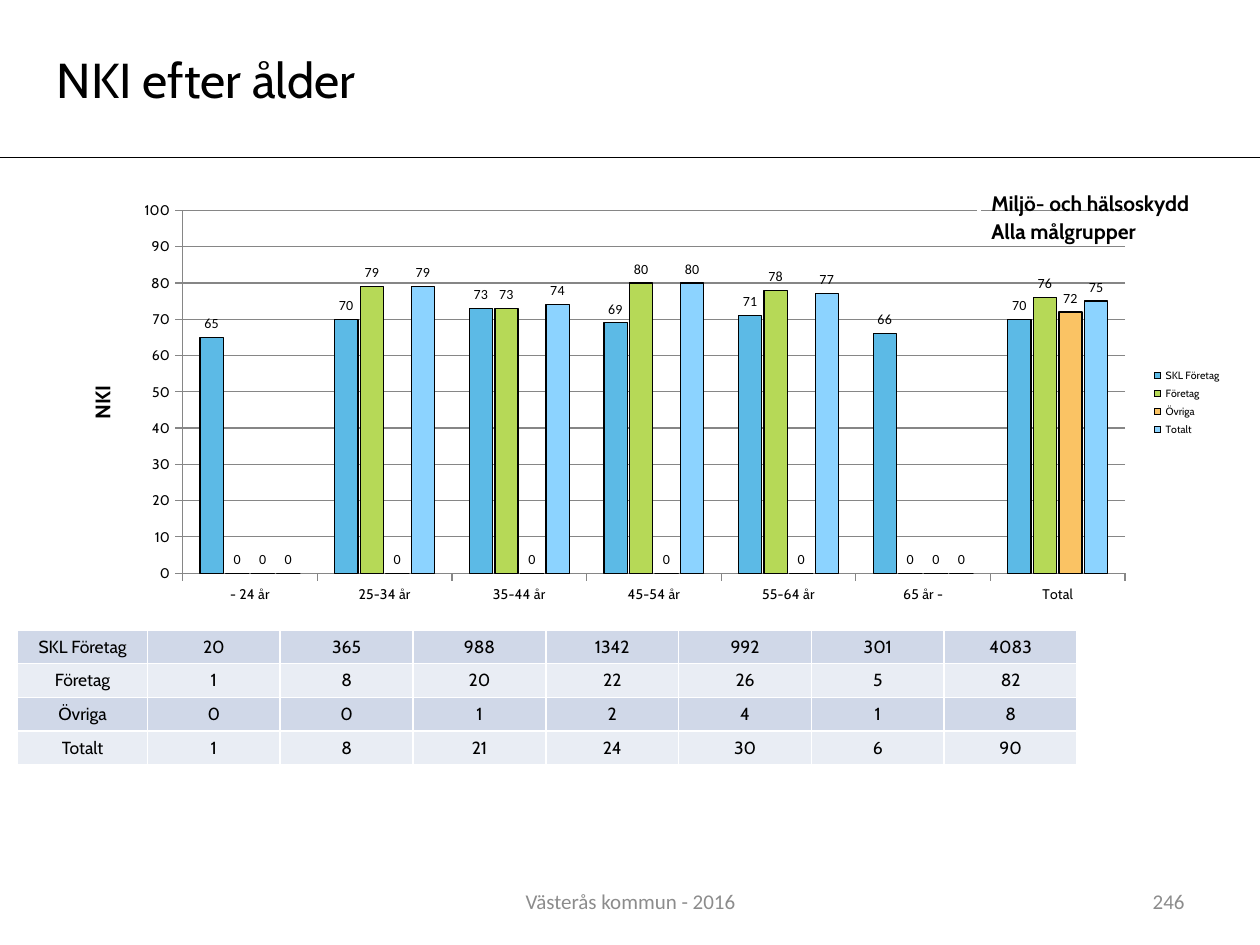
from typing import NamedTuple

from lxml.etree import SubElement
from pptx import Presentation
from pptx.chart.data import CategoryChartData
from pptx.dml.color import RGBColor
from pptx.enum.chart import XL_CHART_TYPE, XL_LABEL_POSITION, XL_LEGEND_POSITION, XL_TICK_MARK
from pptx.enum.shapes import MSO_CONNECTOR, MSO_SHAPE
from pptx.enum.text import MSO_ANCHOR, MSO_AUTO_SIZE, PP_ALIGN
from pptx.oxml import parse_xml
from pptx.oxml.ns import nsdecls, qn
from pptx.util import Inches, Pt

COLORS = {
    "black": "000000", "white": "FFFFFF", "footer": "8C8C8C", "grid": "868686",
    "band": "D0D8E8", "light": "E9EDF4",
}
AGES = ["- 24 år", "25-34 år", "35-44 år", "45-54 år", "55-64 år", "65 år -", "Total"]
CHART_BOX = (0.49, 1.53, 9.31, 3.33)
TABLE_BOX = (0.14, 5, 8.41, 1.07)
NAME_WIDTH = 1.03


class Group(NamedTuple):
    name: str
    color: str
    scores: list[int | None]
    counts: list[int]


class Label(NamedTuple):
    text: str
    box: tuple[float, float, float, float]


GROUPS = [
    Group("SKL Företag", "5CBAE6", [65, 70, 73, 69, 71, 66, 70], [20, 365, 988, 1342, 992, 301, 4083]),
    Group("Företag", "B6D957", [None, 79, 73, 80, 78, None, 76], [1, 8, 20, 22, 26, 5, 82]),
    Group("Övriga", "FAC364", [None] * 6 + [72], [0, 0, 1, 2, 4, 1, 8]),
    Group("Totalt", "8CD3FF", [None, 79, 74, 80, 77, None, 75], [1, 8, 21, 24, 30, 6, 90]),
]
SUBTITLES = [
    Label("Miljö- och hälsoskydd", (7.77, 1.53, 2.16, 0.17)),
    Label("Alla målgrupper", (7.77, 1.75, 2.16, 0.17)),
]


def rgb(name: str) -> RGBColor:
    return RGBColor.from_string(COLORS.get(name, name))


def format_font(font, size: float, color: str = "black", name: str = "Cabin", bold: bool = False) -> None:
    font.size = Pt(size)
    font.name = name
    font.bold = bold
    font.color.rgb = rgb(color)


def write(tf, text: str, align=PP_ALIGN.LEFT, **font) -> None:
    tf.word_wrap = True
    tf.vertical_anchor = MSO_ANCHOR.MIDDLE
    p = tf.paragraphs[0]
    p.alignment = align
    r = p.add_run()
    r.text = text
    format_font(r.font, **font)


def outline(line, color: str, width: float) -> None:
    line.color.rgb = rgb(color)
    line.width = Pt(width)


def add_title(s, text: str) -> None:
    sp = s.shapes.title
    sp.left, sp.top, sp.width, sp.height = map(Inches, (0.07, 0.43, 6, 0.39))
    outline(sp.line, "white", 2)
    tf = sp.text_frame
    tf.auto_size = MSO_AUTO_SIZE.NONE
    tf.margin_left = Inches(0.38)
    write(tf, text, size=28)


def add_subtitle(s, label: Label) -> None:
    sp = s.shapes.add_shape(MSO_SHAPE.RECTANGLE, *map(Inches, label.box))
    sp.shadow.inherit = False
    sp.fill.background()
    outline(sp.line, "white", 2)
    write(sp.text_frame, label.text, size=12, bold=True)


def add_footer(s, label: Label, align) -> None:
    sp = s.shapes.add_textbox(*map(Inches, label.box))
    write(sp.text_frame, label.text, align, size=12, color="footer", name="Calibri")


def add_rule(s, y: float) -> None:
    cx = s.shapes.add_connector(MSO_CONNECTOR.STRAIGHT, 0, Inches(y), Inches(10), Inches(y))
    outline(cx.line, "black", 0.75)
    SubElement(cx._element.spPr, qn("a:effectLst"))


def set_layout(parent, index: int, inner: bool = False, **inches: float) -> None:
    for old in parent.findall(qn("c:layout")):
        parent.remove(old)
    width, height = CHART_BOX[2:]
    target = '<c:layoutTarget val="inner"/>' if inner else ""
    modes = '<c:xMode val="edge"/><c:yMode val="edge"/>'
    values = "".join(f'<c:{key} val="{value / (width if key in "xw" else height)}"/>'
                     for key, value in inches.items())
    parent.insert(index, parse_xml(
        f'<c:layout {nsdecls("c")}><c:manualLayout>{target}{modes}{values}</c:manualLayout></c:layout>'))


def add_score_chart(s) -> None:
    data = CategoryChartData()
    data.categories = AGES
    for group in GROUPS:
        data.add_series(group.name, group.scores)
    chart = s.shapes.add_chart(
        XL_CHART_TYPE.COLUMN_CLUSTERED, *map(Inches, CHART_BOX), data).chart
    chart._chartSpace.chart.find(qn("c:dispBlanksAs")).set("val", "zero")
    format_font(chart.font, 18, name="Calibri")
    chart.has_title = False
    chart.has_legend = True
    chart.legend.position = XL_LEGEND_POSITION.RIGHT
    chart.legend.include_in_layout = False
    format_font(chart.legend.font, 6)

    value_axis = chart.value_axis
    for axis in (chart.category_axis, value_axis):
        axis.major_tick_mark = XL_TICK_MARK.OUTSIDE
        outline(axis.format.line, "grid", 0.75)
        format_font(axis.tick_labels.font, 8)
    value_axis.minimum_scale, value_axis.maximum_scale, value_axis.major_unit = 0, 100, 10
    outline(value_axis.major_gridlines.format.line, "grid", 0.75)
    title = value_axis.axis_title
    r = title.text_frame.paragraphs[0].add_run()
    r.text = "NKI"
    format_font(r.font, 12, bold=True)
    set_layout(title._element, 1, x=0.18, y=1.5)

    plot = chart.plots[0]
    plot.gap_width, plot.overlap, plot.vary_by_categories = 150, -10, False
    for group, series in zip(GROUPS, plot.series):
        series.format.fill.solid()
        series.format.fill.fore_color.rgb = rgb(group.color)
        outline(series.format.line, "black", 0.75)
        labels = series.data_labels
        labels.show_value = True
        labels.position = XL_LABEL_POSITION.OUTSIDE_END
        format_font(labels.font, 8, name="Calibri")
    set_layout(chart._chartSpace.chart.plotArea, 0, inner=True, x=0.96, y=0.14, w=7.48, h=2.88)


def add_borders(cell) -> None:
    tc_pr = cell._tc.get_or_add_tcPr()
    for index, side in enumerate(("lnL", "lnR", "lnT", "lnB")):
        tc_pr.insert(index, parse_xml(
            f'<a:{side} {nsdecls("a")} w="{Pt(1)}"><a:solidFill>'
            f'<a:srgbClr val="{COLORS["white"]}"/></a:solidFill></a:{side}>'))


def add_count_table(s) -> None:
    table = s.shapes.add_table(len(GROUPS), len(AGES) + 1, *map(Inches, TABLE_BOX)).table
    table.first_row = False
    count_width = (TABLE_BOX[2] - NAME_WIDTH) / len(AGES)
    for i, col in enumerate(table.columns):
        col.width = Inches(count_width if i else NAME_WIDTH)
    for i, group in enumerate(GROUPS):
        for cell, value in zip(table.rows[i].cells, [group.name, *group.counts]):
            cell.fill.solid()
            cell.fill.fore_color.rgb = rgb("light" if i % 2 else "band")
            add_borders(cell)
            write(cell.text_frame, str(value), PP_ALIGN.CENTER, size=10)


def main() -> None:
    prs = Presentation()
    prs.slide_width, prs.slide_height = Inches(10), Inches(7.5)
    s = prs.slides.add_slide(prs.slide_layouts[5])
    add_footer(s, Label("Västerås kommun - 2016", (3.42, 6.95, 3.17, 0.4)), PP_ALIGN.CENTER)
    add_footer(s, Label("246", (7.17, 6.95, 2.33, 0.4)), PP_ALIGN.RIGHT)
    add_score_chart(s)
    add_count_table(s)
    for label in SUBTITLES:
        add_subtitle(s, label)
    add_rule(s, 1.25)
    add_title(s, "NKI efter ålder")
    prs.save("out.pptx")


if __name__ == "__main__":
    main()
